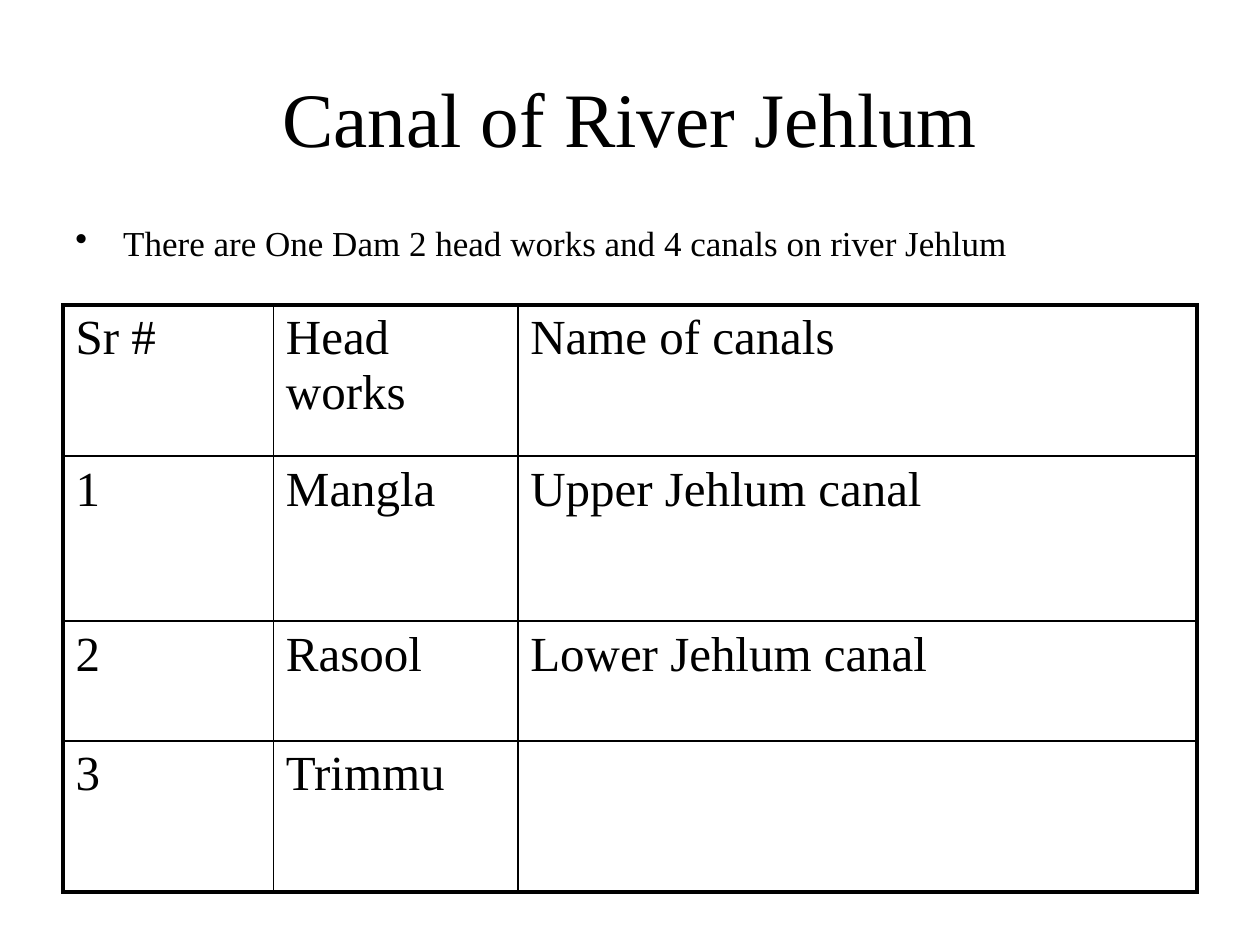
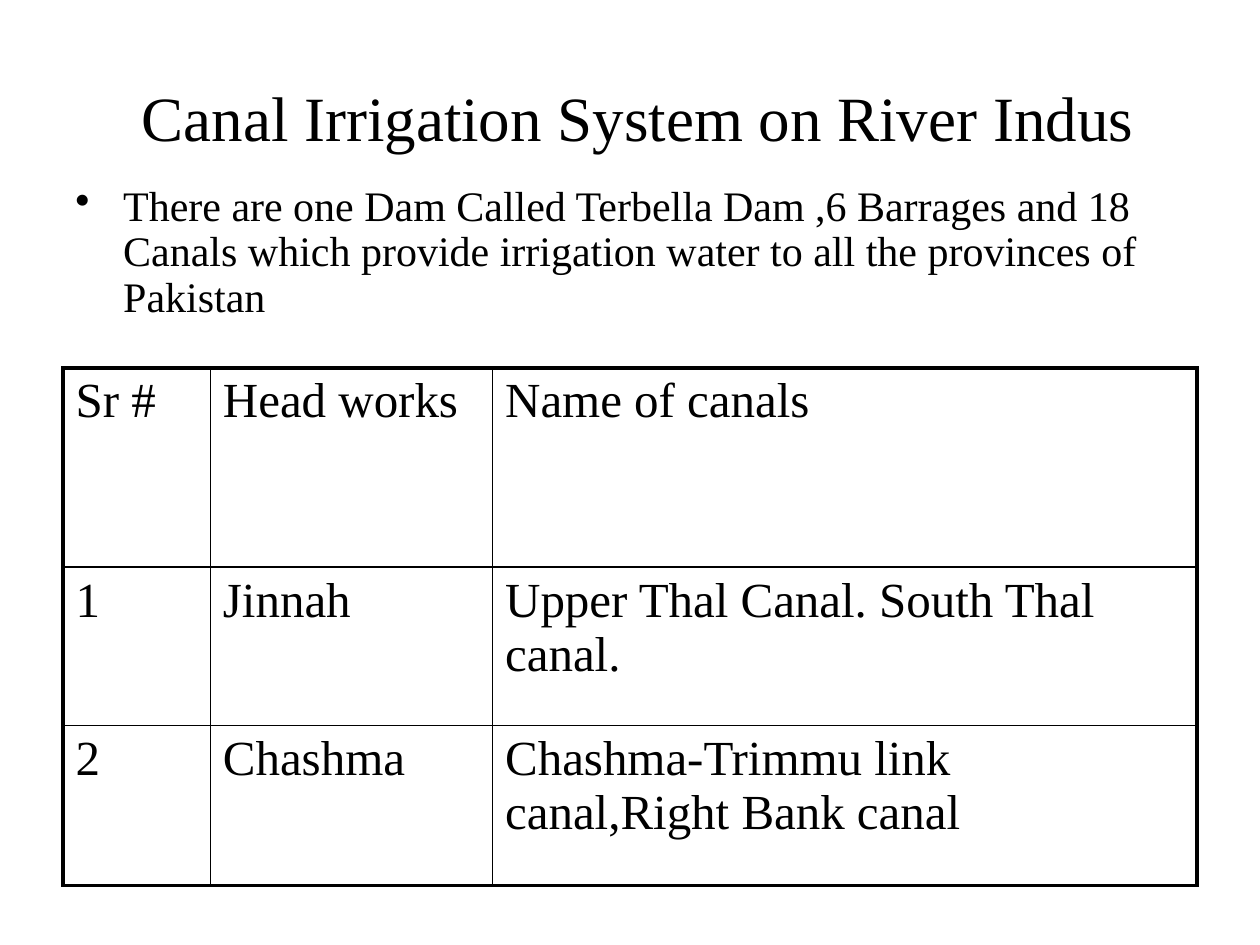
"""Build two slides on the canals of the rivers Jehlum and Indus."""
from dataclasses import dataclass

from lxml.etree import SubElement
from pptx import Presentation
from pptx.dml.color import RGBColor
from pptx.enum.text import MSO_ANCHOR as Anchor, MSO_AUTO_SIZE as AutoSize, PP_ALIGN as Align
from pptx.oxml.ns import qn
from pptx.util import Inches, Pt

COLOURS = {"ink": "000000", "paper": "FFFFFF"}
FONT = "Times New Roman"
LEFT, WIDTH = 0.5, 9
OUTER, INNER = 2.25, 1
HEADINGS = ("Sr #", "Head works", "Name of canals")


@dataclass(frozen=True)
class Bullet:
    text: str
    size: int
    top: float
    width: float
    height: float


@dataclass(frozen=True)
class CanalTable:
    top: float
    columns: tuple[float, ...]
    heights: tuple[float, ...]
    canals: tuple[tuple[str, str], ...]


@dataclass(frozen=True)
class RiverPage:
    title: str
    title_size: int
    bullet: Bullet
    table: CanalTable


PAGES = (
    RiverPage(
        "Canal of River Jehlum", 44,
        Bullet("There are One Dam 2 head works and 4 canals on river Jehlum",
               20, 1.75, 8.83, 0.5),
        CanalTable(2.42, (1.67, 1.94, 5.39), (1.2, 1.31, 0.95, 1.2), (
            ("Mangla", "Upper Jehlum canal"),
            ("Rasool", "Lower Jehlum canal"),
            ("Trimmu", ""),
        )),
    ),
    RiverPage(
        " Canal Irrigation System on River Indus", 36,
        Bullet("There are one Dam Called Terbella Dam ,6 Barrages and 18 Canals "
               "which provide irrigation water to all the provinces of Pakistan",
               24, 1.42, 9, 1.25),
        CanalTable(2.92, (1.17, 2.24, 5.59), (1.58, 1.26, 1.27), (
            ("Jinnah", "Upper Thal Canal. South Thal canal."),
            ("Chashma", "Chashma-Trimmu link canal,Right Bank canal"),
        )),
    ),
)


def add_span(para, text: str, size: int) -> None:
    span = para.add_run()
    span.text = text
    span.font.name = FONT
    span.font.size = Pt(size)
    span.font.color.rgb = RGBColor.from_string(COLOURS["ink"])


def space_before(para, percent: int) -> None:
    spacing = SubElement(para._p.get_or_add_pPr(), qn("a:spcBef"))
    SubElement(spacing, qn("a:spcPct"), val=str(percent * 1000))


def add_title(page, text: str, size: int) -> None:
    title = page.shapes.title
    title.left, title.top = Inches(LEFT), Inches(0.3)
    title.width, title.height = Inches(WIDTH), Inches(1.25)
    frame = title.text_frame
    frame.auto_size = AutoSize.NONE
    frame.vertical_anchor = Anchor.MIDDLE
    para = frame.paragraphs[0]
    para.alignment = Align.CENTER
    add_span(para, text, size)


def add_bullet(page, bullet: Bullet) -> None:
    box = page.shapes.add_textbox(Inches(LEFT), Inches(bullet.top),
                                  Inches(bullet.width), Inches(bullet.height))
    box.text_frame.word_wrap = True
    para = box.text_frame.paragraphs[0]
    para.line_spacing = 0.9
    space_before(para, 20)
    properties = para._p.get_or_add_pPr()
    properties.set("marL", str(Inches(0.38)))
    properties.set("indent", str(-Inches(0.38)))
    SubElement(properties, qn("a:buChar"), char="•")
    add_span(para, bullet.text, bullet.size)


def add_border(cell, side: str, points: float) -> None:
    line = SubElement(cell._tc.get_or_add_tcPr(), qn(f"a:ln{side}"), w=str(Pt(points)))
    fill = SubElement(line, qn("a:solidFill"))
    SubElement(fill, qn("a:srgbClr"), val=COLOURS["ink"])


def add_canal_table(page, canal_table: CanalTable) -> None:
    rows = [HEADINGS]
    rows += [(str(number), *canal) for number, canal in enumerate(canal_table.canals, 1)]
    table = page.shapes.add_table(
        len(rows), len(HEADINGS), Inches(LEFT), Inches(canal_table.top),
        Inches(WIDTH), Inches(sum(canal_table.heights))).table
    table.first_row = table.horz_banding = False
    for column, width in zip(table.columns, canal_table.columns):
        column.width = Inches(width)
    for row, height in zip(table.rows, canal_table.heights):
        row.height = Inches(height)
    for r, texts in enumerate(rows):
        for c, text in enumerate(texts):
            cell = table.cell(r, c)
            edges = {"L": c == 0, "R": c == len(HEADINGS) - 1,
                     "T": r == 0, "B": r == len(rows) - 1}
            for side, is_outer in edges.items():
                add_border(cell, side, OUTER if is_outer else INNER)
            cell.fill.background()
            para = cell.text_frame.paragraphs[0]
            space_before(para, 20)
            if text:
                add_span(para, text, 28)


def add_river_page(deck, river: RiverPage) -> None:
    page = deck.slides.add_slide(deck.slide_layouts[5])
    page.background.fill.solid()
    page.background.fill.fore_color.rgb = RGBColor.from_string(COLOURS["paper"])
    add_title(page, river.title, river.title_size)
    add_bullet(page, river.bullet)
    add_canal_table(page, river.table)


def main() -> None:
    deck = Presentation()
    deck.slide_width, deck.slide_height = Inches(10), Inches(7.5)
    for river in PAGES:
        add_river_page(deck, river)
    deck.save("out.pptx")


if __name__ == "__main__":
    main()
